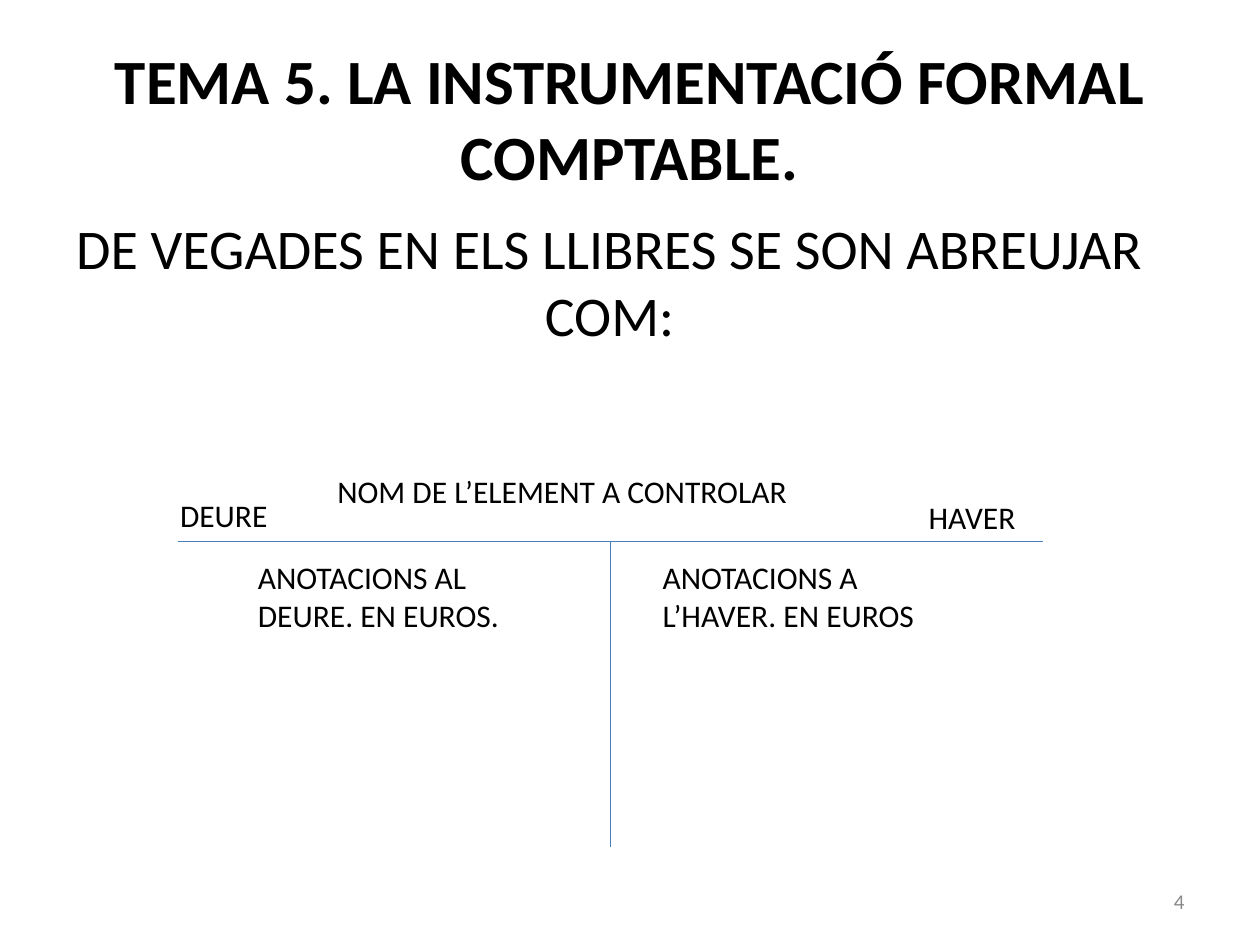
from lxml import etree
from pptx import Presentation
from pptx.dml.color import RGBColor
from pptx.enum.shapes import MSO_CONNECTOR
from pptx.enum.text import MSO_ANCHOR, PP_ALIGN
from pptx.oxml.ns import qn
from pptx.util import Cm, Pt

LINE = MSO_CONNECTOR.STRAIGHT
TOP, MIDDLE = MSO_ANCHOR.TOP, MSO_ANCHOR.MIDDLE
LEFT, CENTER, RIGHT = PP_ALIGN.LEFT, PP_ALIGN.CENTER, PP_ALIGN.RIGHT
FONT = "Calibri"
BLACK, GREY, BLUE = "000000", "898989", "4A7EBB"


def color(code):
    return RGBColor.from_string(code)


def add_text(slide, box, text, size=18, align=LEFT, anchor=TOP,
             tint=BLACK, bold=False, before=0):
    frame = slide.shapes.add_textbox(*map(Cm, box)).text_frame
    frame.word_wrap = True
    frame.vertical_anchor = anchor
    frame.text = text
    para = frame.paragraphs[0]
    para.alignment = align
    para.space_before = Pt(before)
    font = para.runs[0].font
    font.name, font.size, font.bold = FONT, Pt(size), bold
    font.color.rgb = color(tint)


def add_line(slide, *ends):
    line = slide.shapes.add_connector(LINE, *map(Cm, ends))
    line.line.color.rgb = color(BLUE)
    line.line.width = Pt(0.75)
    etree.SubElement(line._element.spPr, qn("a:effectLst"))


def main():
    deck = Presentation()
    deck.slide_width, deck.slide_height = Cm(25.4), Cm(19.05)
    slide = deck.slides.add_slide(deck.slide_layouts[6])

    # Title and introduction
    add_text(slide, (1.9, 0.58, 21.59, 3.58),
             "TEMA 5. LA INSTRUMENTACIÓ FORMAL COMPTABLE.",
             36, CENTER, MIDDLE, bold=True)
    add_text(slide, (1.09, 4.17, 22.4, 12.9),
             "DE VEGADES EN ELS LLIBRES SE SON ABREUJAR COM:",
             32, CENTER, before=6.4)

    # T account: bar and stem
    left, right, top, bottom = 3.58, 21.03, 10.92, 17.07
    middle = (left + right) / 2
    add_line(slide, left, top, right, top)
    add_line(slide, middle, top, middle, bottom)

    # Account labels
    labels = [
        ((3.38, 9.88, 3.18, 1.02), "DEURE"),
        ((18.47, 9.91, 2.59, 1.02), "HAVER"),
        ((6.55, 9.4, 11.51, 1.02), "NOM DE L’ELEMENT A CONTROLAR"),
        ((4.95, 11.13, 6.15, 1.8), "ANOTACIONS AL DEURE. EN EUROS."),
        ((13.11, 11.13, 6.76, 1.8), "ANOTACIONS A L’HAVER. EN EUROS"),
    ]
    for box, text in labels:
        add_text(slide, box, text)

    # Page number
    add_text(slide, (18.21, 17.65, 5.92, 1.02), "4", 12, RIGHT, MIDDLE, GREY)

    deck.save("out.pptx")


if __name__ == "__main__":
    main()
